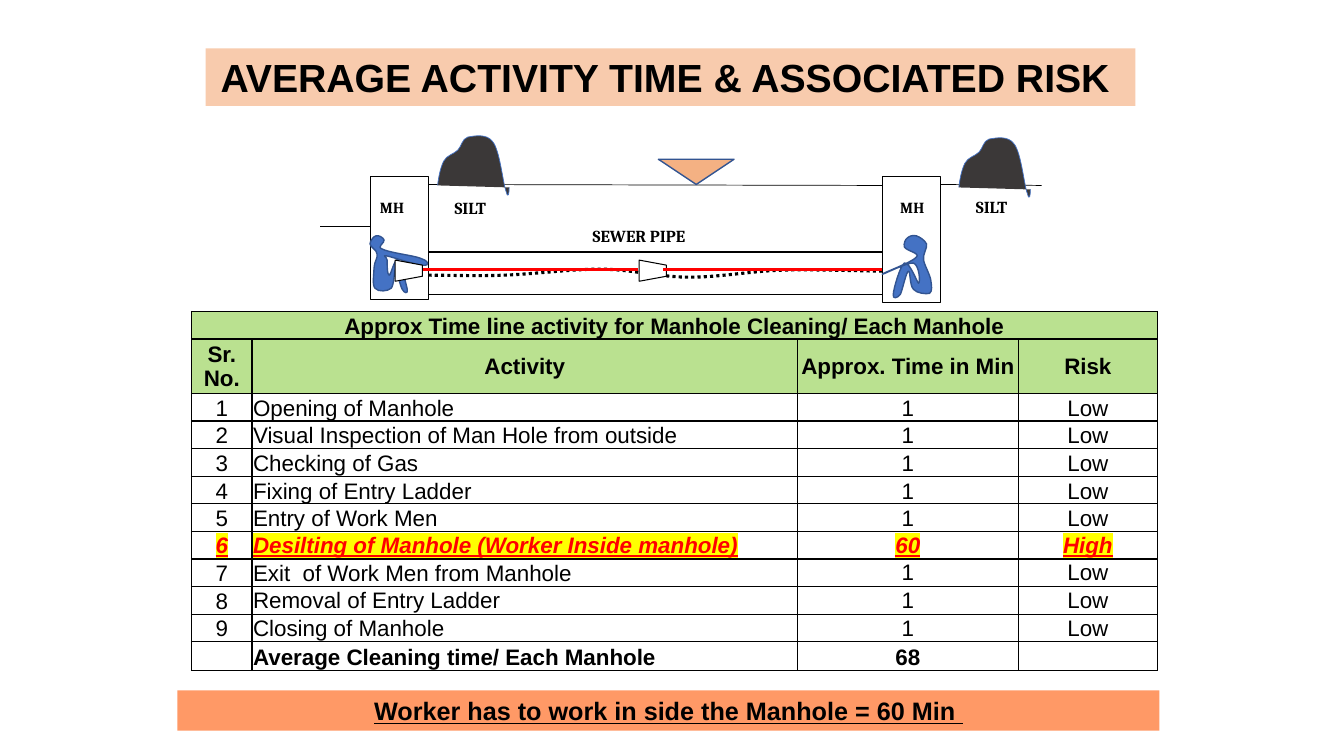
import pptx
import pptx.dml.color
import pptx.enum.dml
import pptx.enum.shapes
import pptx.enum.text
import pptx.util
from lxml import etree
from pptx.oxml.ns import qn

Inches, Pt = pptx.util.Inches, pptx.util.Pt
RGB = pptx.dml.color.RGBColor
SHAPE = pptx.enum.shapes.MSO_SHAPE
ALIGN = pptx.enum.text.PP_ALIGN
ANCHOR = pptx.enum.text.MSO_ANCHOR

BLACK = RGB(0, 0, 0)
WHITE = RGB(0xFF, 0xFF, 0xFF)
RED = RGB(0xFF, 0, 0)
PEACH = RGB(0xF8, 0xCB, 0xAD)
ORANGE = RGB(0xFF, 0x99, 0x66)
SAND = RGB(0xF4, 0xB1, 0x83)
GREEN = RGB(0x92, 0xD0, 0x50)
BLUE = RGB(0x44, 0x72, 0xC4)
NAVY = RGB(0x32, 0x54, 0x91)
SILT = RGB(0x3B, 0x38, 0x38)

ACTIVITIES = [
    ("1", "Opening of Manhole", "1", "Low"),
    ("2", "Visual Inspection of Man Hole from outside", "1", "Low"),
    ("3", "Checking of Gas", "1", "Low"),
    ("4", "Fixing of Entry Ladder", "1", "Low"),
    ("5", "Entry of Work Men", "1", "Low"),
    ("6", "Desilting of Manhole (Worker Inside manhole)", "60", "High"),
    ("7", "Exit  of Work Men from Manhole", "1", "Low"),
    ("8", "Removal of Entry Ladder", "1", "Low"),
    ("9", "Closing of Manhole", "1", "Low"),
]
ROWS = [
    ("Approx Time line activity for Manhole Cleaning/ Each Manhole", "", "", ""),
    ("Sr. No.", "Activity", "Approx. Time in Min", "Risk"),
    *ACTIVITIES,
    ("", "Average Cleaning time/ Each Manhole", "68", ""),
]
HEADER_ROWS, HIGH_RISK_ROW, TOTAL_ROW = (0, 1), 7, 11
COLUMN_WIDTHS = (0.6, 5.41, 2.19, 1.38)

# Each outline is a start point followed by lines (x, y) or cubic segments.
BUCKET = [(3.95, 2.55), (4, 2.82), (4.11, 2.82), (4.16, 2.55)]
ROPE = [(4.25, 2.73), (4.48, 2.73, 4.72, 2.74, 5, 2.73), (5.29, 2.72, 5.65, 2.67, 5.95, 2.67),
        (6.26, 2.67, 6.54, 2.75, 6.84, 2.75), (7.14, 2.75, 7.44, 2.69, 7.76, 2.68),
        (8.08, 2.67, 8.59, 2.69, 8.75, 2.69)]
LEFT_WORKER = [
    (3.81, 2.38), (3.8, 2.36, 3.76, 2.33, 3.73, 2.34), (3.71, 2.34, 3.67, 2.39, 3.67, 2.42),
    (3.67, 2.45, 3.74, 2.48, 3.74, 2.52), (3.75, 2.56, 3.71, 2.6, 3.71, 2.66),
    (3.71, 2.72, 3.69, 2.83, 3.72, 2.86), (3.75, 2.9, 3.85, 2.89, 3.88, 2.86),
    (3.91, 2.83, 3.91, 2.68, 3.92, 2.68), (3.94, 2.69, 3.97, 2.84, 3.99, 2.87),
    (4.01, 2.91, 4.05, 2.92, 4.04, 2.87), (4.03, 2.83, 3.98, 2.61, 3.95, 2.58),
    (3.91, 2.56, 3.88, 2.73, 3.86, 2.73), (3.84, 2.73, 3.84, 2.62, 3.84, 2.58),
    (3.84, 2.55, 3.78, 2.53, 3.84, 2.54), (3.89, 2.55, 4.1, 2.62, 4.17, 2.63),
    (4.24, 2.64, 4.25, 2.62, 4.24, 2.61), (4.24, 2.59, 4.2, 2.57, 4.13, 2.55),
    (4.05, 2.53, 3.84, 2.5, 3.79, 2.47), (3.73, 2.45, 3.82, 2.41, 3.81, 2.38)]
RIGHT_WORKER = [
    (9.09, 2.55), (9.13, 2.51, 8.99, 2.49, 8.97, 2.45), (8.96, 2.42, 8.98, 2.37, 9, 2.36),
    (9.02, 2.34, 9.06, 2.33, 9.09, 2.34), (9.12, 2.35, 9.17, 2.38, 9.19, 2.42),
    (9.2, 2.46, 9.15, 2.52, 9.16, 2.58), (9.17, 2.63, 9.22, 2.72, 9.23, 2.77),
    (9.24, 2.83, 9.25, 2.89, 9.22, 2.91), (9.19, 2.92, 9.09, 2.91, 9.06, 2.87),
    (9.02, 2.83, 9.03, 2.68, 9.01, 2.69), (8.99, 2.69, 8.95, 2.88, 8.93, 2.92),
    (8.9, 2.96, 8.85, 2.97, 8.86, 2.92), (8.86, 2.87, 8.93, 2.63, 8.97, 2.61),
    (9.02, 2.59, 9.1, 2.81, 9.11, 2.81), (9.13, 2.81, 9.12, 2.63, 9.06, 2.61),
    (9, 2.6, 8.75, 2.73, 8.75, 2.72), (8.75, 2.71, 9.05, 2.6, 9.09, 2.55)]
SILT_HEAP = [
    (4.34, 1.84), (4.35, 1.75, 4.37, 1.66, 4.4, 1.6), (4.43, 1.54, 4.5, 1.53, 4.54, 1.49),
    (4.58, 1.45, 4.58, 1.38, 4.64, 1.36), (4.7, 1.35, 4.83, 1.32, 4.89, 1.41),
    (4.96, 1.5, 4.99, 1.83, 5.02, 1.9), (5.04, 1.98, 5.05, 1.92, 5.05, 1.86)]


class Slide:
    def __init__(self, prs):
        self.s = prs.slides.add_slide(prs.slide_layouts[5])
        self.font = "Arial"

    def run(self, p, text, size, bold=False, font=None, color=BLACK, underline=None, highlight=None):
        r = p.add_run()
        r.text = text
        f = r.font
        f.size, f.bold, f.underline = Pt(size), bold, underline
        f.color.rgb = color
        if highlight:
            mark = etree.SubElement(f._element, qn("a:highlight"))
            etree.SubElement(mark, qn("a:srgbClr"), val=highlight)
        f.name = font or self.font
        return r

    def style(self, sp, fill=None, line=None, width=0.75):
        sp.shadow.inherit = False
        if fill is None:
            sp.fill.background()
        else:
            sp.fill.solid()
            sp.fill.fore_color.rgb = fill
        if line is None:
            sp.line.fill.background()
        else:
            sp.line.color.rgb = line
            sp.line.width = Pt(width)
        return sp

    def shape(self, kind, x, y, w, h, fill=None, line=None, width=0.75):
        sp = self.s.shapes.add_shape(kind, Inches(x), Inches(y), Inches(w), Inches(h))
        return self.style(sp, fill, line, width)

    def banner(self, sp, text, size, underline=None):
        tf = sp.text_frame
        tf.word_wrap, tf.vertical_anchor = True, ANCHOR.MIDDLE
        tf.auto_size = pptx.enum.text.MSO_AUTO_SIZE.NONE
        p = tf.paragraphs[0]
        p.alignment, p.line_spacing = ALIGN.CENTER, 1.0
        self.run(p, text, size, True, underline=underline)

    def title(self, text, x, y, w, h):
        sp = self.s.shapes.title
        sp.left, sp.top, sp.width, sp.height = map(Inches, (x, y, w, h))
        sp.fill.solid()
        sp.fill.fore_color.rgb = PEACH
        self.banner(sp, text, 28)

    def label(self, text, x, y, w, h, size):
        sp = self.s.shapes.add_textbox(Inches(x), Inches(y), Inches(w), Inches(h))
        sp.text_frame.word_wrap = False
        self.run(sp.text_frame.paragraphs[0], text, size, True, "Cambria")

    def line(self, x1, y1, x2, y2, color=BLACK, width=0.5):
        c = self.s.shapes.add_connector(pptx.enum.shapes.MSO_CONNECTOR.STRAIGHT,
                                        Inches(x1), Inches(y1), Inches(x2), Inches(y2))
        c.line.color.rgb, c.line.width = color, Pt(width)
        etree.SubElement(c._element.spPr, qn("a:effectLst"))

    def outline(self, segments, dx=0, dy=0, close=True, **style):
        """Draw a freeform, bending every six-number segment into a cubic curve."""
        ends = [((seg[-2] + dx) * 1000, (seg[-1] + dy) * 1000) for seg in segments]
        fb = self.s.shapes.build_freeform(*ends[0], scale=Inches(1) / 1000)
        fb.add_line_segments(ends[1:], close=close)
        sp = fb.convert_to_shape()
        left, top = (min(axis) for axis in zip(*ends))
        for seg, step in zip(segments[1:], list(sp._element.iter(qn("a:lnTo")))):
            if len(seg) == 6:
                step.tag = qn("a:cubicBezTo")
                for i in (0, 2):
                    pt = etree.Element(qn("a:pt"), x=str(round((seg[i] + dx) * 1000 - left)),
                                       y=str(round((seg[i + 1] + dy) * 1000 - top)))
                    step.insert(i // 2, pt)
        return self.style(sp, **style)

    def cell(self, cell, text, row, col):
        header, risky = row in HEADER_ROWS, row == HIGH_RISK_ROW
        cell.margin_left = cell.margin_right = cell.margin_top = Inches(0.01)
        cell.margin_bottom = 0
        middle = row in (1, HIGH_RISK_ROW) or (row in (8, 9, 10) and col >= (2 if row == 8 else 1))
        cell.vertical_anchor = ANCHOR.MIDDLE if middle else ANCHOR.BOTTOM
        p = cell.text_frame.paragraphs[0]
        p.alignment = ALIGN.LEFT if col == 1 and not header else ALIGN.CENTER
        if text:
            r = self.run(p, text, 16, header or risky or row == TOTAL_ROW, color=RED if risky else BLACK,
                         underline=risky, highlight="FFFF00" if risky else None)
            r.font.italic = risky
        else:
            etree.SubElement(p._p, qn("a:endParaRPr"), sz="1600")
        tcPr = cell._tc.get_or_add_tcPr()
        for side in ("lnL", "lnR", "lnT", "lnB"):
            ln = etree.SubElement(tcPr, qn("a:" + side), w=str(Pt(1)))
            etree.SubElement(etree.SubElement(ln, qn("a:solidFill")), qn("a:srgbClr"), val="000000")
        if header:
            cell.fill.solid()
            cell.fill.fore_color.rgb = GREEN
            etree.SubElement(tcPr.find(qn("a:solidFill"))[0], qn("a:alpha"), val="63000")
        else:
            cell.fill.background()

    def table(self, x, y, w, h):
        t = self.s.shapes.add_table(len(ROWS), len(COLUMN_WIDTHS),
                                    Inches(x), Inches(y), Inches(w), Inches(h)).table
        t.first_row = t.horz_banding = False
        for column, width in zip(t.columns, COLUMN_WIDTHS):
            column.width = Inches(width)
        tall = 0.54
        for i, row in enumerate(ROWS):
            t.rows[i].height = Inches(tall if i == 1 else (h - tall) / (len(ROWS) - 1))
            for j, text in enumerate(row):
                self.cell(t.cell(i, j), text, i, j)
        t.cell(0, 0).merge(t.cell(0, len(COLUMN_WIDTHS) - 1))


def main():
    prs = pptx.Presentation()
    prs.slide_width, prs.slide_height = Inches(13.33), Inches(7.5)
    s = Slide(prs)
    s.title("AVERAGE ACTIVITY TIME & ASSOCIATED RISK  ", 2.04, 0.48, 9.22, 0.57)
    s.table(1.9, 3.09, 9.58, 3.55)
    footer = s.shape(SHAPE.RECTANGLE, 1.76, 6.85, 9.74, 0.4, ORANGE)
    s.banner(footer, "Worker has to work in side the Manhole = 60 Min ", 18, True)

    s.shape(SHAPE.RECTANGLE, 8.75, 1.75, 0.58, 1.25, line=BLACK)
    s.shape(SHAPE.RECTANGLE, 4.25, 2.5, 4.5, 0.42, WHITE, BLACK)
    s.shape(SHAPE.RECTANGLE, 3.67, 1.75, 0.58, 1.22, line=BLACK)
    rope = s.outline(ROPE, close=False, line=BLACK, width=2.25)
    rope.line.dash_style = pptx.enum.dml.MSO_LINE.ROUND_DOT
    s.line(4.17, 2.67, 6.33, 2.67, RED, 2.25)
    s.outline(BUCKET, dx=2.42, fill=WHITE, line=BLACK).rotation = 270
    s.line(6.58, 2.67, 8.75, 2.67, RED, 2.25)
    for worker in (LEFT_WORKER, RIGHT_WORKER):
        s.outline(worker, fill=BLUE, line=NAVY, width=1)
    for ground in ((3.67, 2.25, 3.17, 2.25), (4.25, 1.83, 8.75, 1.84), (10.33, 1.84, 9.33, 1.83)):
        s.line(*ground)
    for dx, dy in ((5.17, 0.02), (0, 0)):
        s.outline(SILT_HEAP, dx, dy, close=False, fill=SILT, line=BLUE, width=0.5)
    s.outline(BUCKET, fill=WHITE, line=BLACK).rotation = 270
    level = s.shape(SHAPE.ISOSCELES_TRIANGLE, 6.53, 1.58, 0.75, 0.25, SAND, NAVY, 1)
    level.rotation = 180

    for x in (8.83, 3.67):
        s.label("MH", x, 1.92, 0.45, 0.28, 11)
    s.label("SEWER PIPE", 5.78, 2.19, 1.21, 0.3, 12)
    for x, y in ((4.41, 1.91), (9.58, 1.9)):
        s.label("SILT", x, y, 0.55, 0.3, 12)
    prs.save("out.pptx")


if __name__ == "__main__":
    main()
